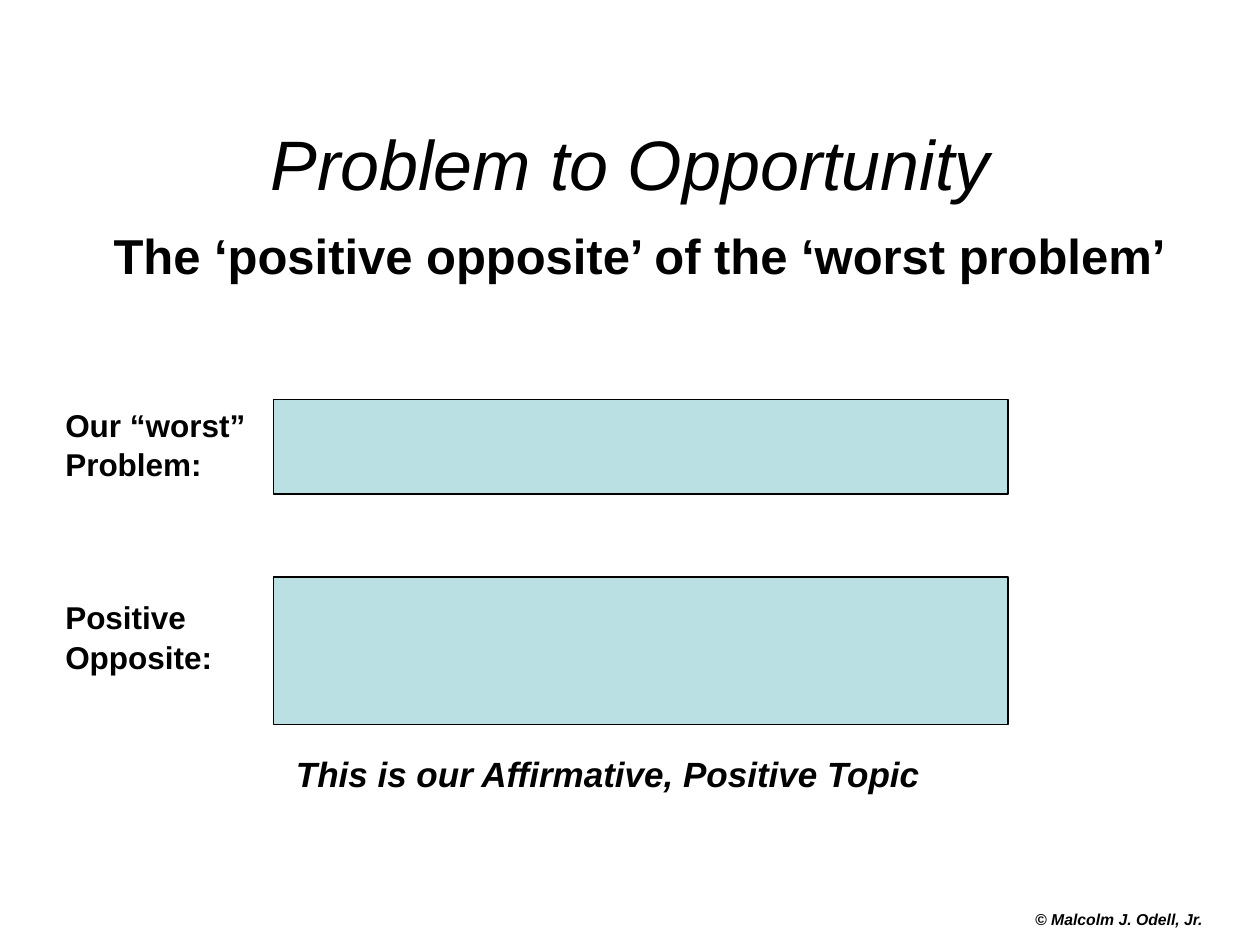
import dataclasses

import pptx
import pptx.util
import pptx.dml.color
import pptx.enum.shapes
import pptx.enum.text

ALIGN = pptx.enum.text.PP_ALIGN
ANCHOR = pptx.enum.text.MSO_ANCHOR
AUTO = pptx.enum.text.MSO_AUTO_SIZE


@dataclasses.dataclass(frozen=True)
class Theme:
    font: str = "Arial"
    ink: str = "000000"
    panel: str = "BBE0E3"
    title: int = 40
    subtitle: int = 28
    topic: int = 20
    label: int = 18
    credit: int = 9
    border: float = 0.75


THEME = Theme()


def inches(box):
    return [pptx.util.Inches(v) for v in box]


def rgb(value):
    return pptx.dml.color.RGBColor.from_string(value)


def add_text(p, text, size, bold=False, italic=False, align=None, before=0):
    """Add one formatted run to paragraph p."""
    p.alignment = align
    p.space_before = pptx.util.Pt(before)
    r = p.add_run()
    r.text = text
    r.font.name = THEME.font
    r.font.size = pptx.util.Pt(size)
    r.font.bold = bold
    r.font.italic = italic
    r.font.color.rgb = rgb(THEME.ink)


def add_box(s, box, wrap=True, auto=AUTO.NONE):
    tf = s.shapes.add_textbox(*inches(box)).text_frame
    tf.word_wrap = wrap
    tf.auto_size = auto
    return tf


def add_heading(s, box):
    sp = s.shapes.title
    sp.left, sp.top, sp.width, sp.height = inches(box)
    tf = sp.text_frame
    tf.vertical_anchor = ANCHOR.MIDDLE
    tf.auto_size = AUTO.NONE
    p = tf.paragraphs[0]
    add_text(p, "Problem to Opportunity", THEME.title, italic=True, align=ALIGN.CENTER)
    p.add_line_break()
    add_text(p, " ", THEME.title, italic=True, align=ALIGN.CENTER)
    add_text(p, "The ‘positive opposite’ of the ‘worst problem’", THEME.subtitle,
             bold=True, align=ALIGN.CENTER)


def add_labels(s, box):
    tf = add_box(s, box, wrap=False, auto=AUTO.SHAPE_TO_FIT_TEXT)
    lines = [("Our “worst”", 0), ("Problem:", 1), ("Positive", 66), ("Opposite:", 1)]
    for i, (text, before) in enumerate(lines):
        p = tf.add_paragraph() if i else tf.paragraphs[0]
        add_text(p, text, THEME.label, bold=True, align=ALIGN.LEFT, before=before)


def add_panel(s, box):
    sp = s.shapes.add_shape(pptx.enum.shapes.MSO_SHAPE.RECTANGLE, *inches(box))
    sp.shadow.inherit = False
    sp.fill.solid()
    sp.fill.fore_color.rgb = rgb(THEME.panel)
    sp.line.color.rgb = rgb(THEME.ink)
    sp.line.width = pptx.util.Pt(THEME.border)


def add_worksheet(s, box):
    """Labels on the left, answer panels on the right, topic line below."""
    left, top, width, height = box
    label_w = 1.75
    x, panel_w = left + label_w, width - label_w
    add_labels(s, (left, top, 1.7, 2.2))
    for offset, panel_h in ((0, 0.75), (1.41, 1.17)):
        add_panel(s, (x, top + offset, panel_w, panel_h))
    topic_h = 0.43
    tf = add_box(s, (x + 0.08, top + height - topic_h, panel_w - 0.08, topic_h),
                 auto=AUTO.SHAPE_TO_FIT_TEXT)
    add_text(tf.paragraphs[0], "This is our Affirmative, Positive Topic", THEME.topic,
             bold=True, italic=True, align=ALIGN.LEFT)


def add_credit(s, box):
    tf = add_box(s, box)
    tf.margin_top = tf.margin_bottom = 0
    tf.vertical_anchor = ANCHOR.MIDDLE
    add_text(tf.paragraphs[0], "© Malcolm J. Odell, Jr.", THEME.credit,
             bold=True, italic=True, align=ALIGN.CENTER)


def main():
    prs = pptx.Presentation()
    prs.slide_width, prs.slide_height = inches((10, 7.5))
    s = prs.slides.add_slide(prs.slide_layouts[5])
    s.background.fill.solid()
    s.background.fill.fore_color.rgb = rgb("FFFFFF")
    add_credit(s, (7.92, 7.2, 1.92, 0.19))
    add_heading(s, (0.5, 1, 9, 1.25))
    add_worksheet(s, (0.42, 3.17, 7.58, 3.18))
    prs.save("out.pptx")


if __name__ == "__main__":
    main()
